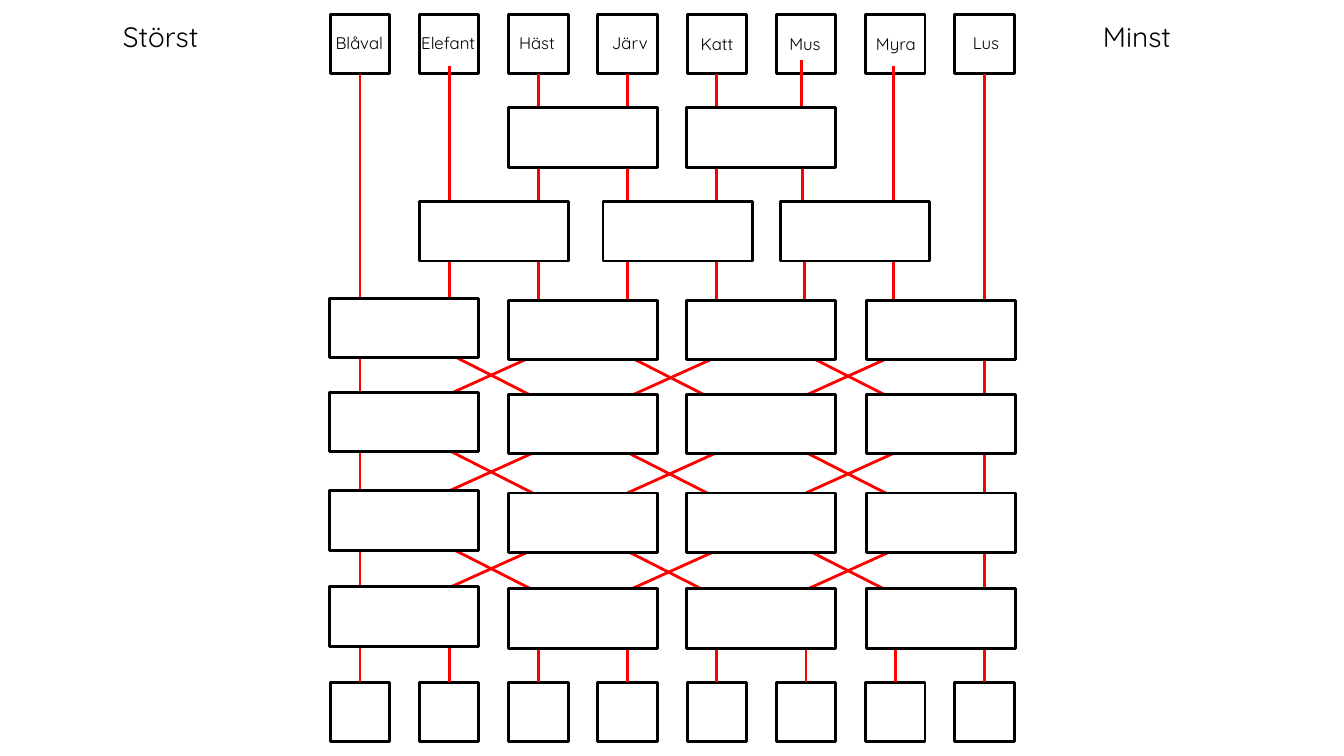
"""Build a slide with a sorting network that orders eight animals by size."""
from dataclasses import dataclass, field
from typing import Optional

from lxml import etree
from pptx import Presentation
from pptx.dml.color import RGBColor
from pptx.enum.shapes import MSO_CONNECTOR, MSO_SHAPE
from pptx.enum.text import MSO_AUTO_SIZE, PP_ALIGN
from pptx.oxml.ns import qn
from pptx.shapes.autoshape import Shape
from pptx.shapes.connector import Connector
from pptx.shapes.shapetree import SlideShapes
from pptx.util import Inches, Pt

RECTANGLE = MSO_SHAPE.RECTANGLE
STRAIGHT = MSO_CONNECTOR.STRAIGHT
LEFT_ALIGN = PP_ALIGN.LEFT
GROW = MSO_AUTO_SIZE.SHAPE_TO_FIT_TEXT
TOP_SIDE, BOTTOM_SIDE = 0, 2

COLORS = {"box": "FFFFFF", "outline": "000000", "wire": "FF0000", "text": "000000"}
LINE_WIDTH = Pt(2)
LANES = 8
FIRST_LANE = 3.57
LANE_STEP = 0.885
NODE = 0.59
COMPARATOR_WIDTH = 1.48
INPUT_TOP, OUTPUT_TOP = 0.14, 6.77
CROSS_DROP, CROSS_RISE = 0.45, 0.4
CROSS_LANES = (1, 3, 5)


@dataclass(frozen=True)
class Label:
    text: str
    left: float
    top: float
    width: float = 0.76
    height: float = 0.3
    size: int = 12
    wrap: bool = True


@dataclass(frozen=True)
class WireRun:
    lanes: tuple[int, ...]
    start: float
    end: float
    shifted: dict[int, float] = field(default_factory=dict)
    from_inputs: bool = False
    to_outputs: bool = False


@dataclass(frozen=True)
class CrossRow:
    falling_tops: tuple[float, ...]
    rising_tops: tuple[float, ...]


@dataclass(frozen=True)
class ComparatorRow:
    top: float
    lefts: tuple[float, ...]
    first_raise: float = 0.0


LABELS = (
    Label("Blåval", 3.23, 0.28),
    Label("Elefant", 4.08, 0.28),
    Label("Häst", 5.05, 0.28),
    Label("Järv", 5.97, 0.28),
    Label("Katt", 6.85, 0.29),
    Label("Mus", 7.73, 0.29),
    Label("Myra", 8.59, 0.29),
    Label("Lus", 9.55, 0.28),
    Label("Störst", 1.12, 0.14, 0.95, 0.44, 20, False),
    Label("Minst", 10.84, 0.14, 0.89, 0.44, 20, False),
)
INNER_LANES = (2, 3, 4, 5)
OUTER_LANES = (0, 7)
WIRE_RUNS = (
    WireRun((2, 3, 4), 0.65, 1.2, from_inputs=True),
    WireRun((5,), 0.6, 1.17, {5: 7.95}),
    WireRun((1, 6), 0.65, 2.23, {6: 8.86}),
    WireRun(OUTER_LANES, 0.6, 3.15, from_inputs=True),
    WireRun(INNER_LANES, 1.53, 2.09, {5: 7.96}),
    WireRun((1, *INNER_LANES, 6), 2.55, 3.11, {5: 7.98, 6: 8.86}),
    WireRun(OUTER_LANES, 3.46, 4.02),
    WireRun(OUTER_LANES, 4.39, 4.95),
    WireRun(OUTER_LANES, 5.36, 5.92),
    WireRun(tuple(range(LANES)), 6.32, 6.89, to_outputs=True),
)
CROSS_ROWS = (
    CrossRow((3.51, 3.53, 3.52), (3.51, 3.54, 3.52)),
    CrossRow((4.47, 4.49, 4.49), (4.47, 4.49, 4.49)),
    CrossRow((5.43, 5.47, 5.45), (5.43, 5.46, 5.45)),
)
FULL_ROW = (3.27, 5.04, 6.81, 8.59)
COMPARATOR_ROWS = (
    ComparatorRow(1.07, (5.04, 6.81)),
    ComparatorRow(2.0, (4.16, 5.98, 7.74)),
    *(ComparatorRow(top, FULL_ROW, 0.02) for top in (2.98, 3.91, 4.89, 5.84)),
)


def color(name: str) -> RGBColor:
    return RGBColor.from_string(COLORS[name])


def lane_x(lane: int) -> float:
    return FIRST_LANE + lane * LANE_STEP


def add_box(shapes: SlideShapes, left: float, top: float, width: float) -> Shape:
    box = shapes.add_shape(RECTANGLE, Inches(left), Inches(top), Inches(width), Inches(NODE))
    box.shadow.inherit = False
    box.fill.solid()
    box.fill.fore_color.rgb = color("box")
    box.line.color.rgb = color("outline")
    box.line.width = LINE_WIDTH
    return box


def add_node_row(shapes: SlideShapes, top: float) -> list[Shape]:
    return [add_box(shapes, lane_x(lane) - NODE / 2, top, NODE) for lane in range(LANES)]


def add_wire(shapes: SlideShapes, x1: float, y1: float, x2: float, y2: float,
             source: Optional[Shape] = None, target: Optional[Shape] = None) -> Connector:
    wire = shapes.add_connector(STRAIGHT, Inches(x1), Inches(y1), Inches(x2), Inches(y2))
    wire.line.color.rgb = color("wire")
    wire.line.width = LINE_WIDTH
    etree.SubElement(wire._element.spPr, qn("a:effectLst"))
    if source is not None:
        wire.begin_connect(source, BOTTOM_SIDE)
    if target is not None:
        wire.end_connect(target, TOP_SIDE)
    return wire


def add_wire_run(shapes: SlideShapes, run: WireRun, inputs: list[Shape],
                 outputs: list[Shape]) -> None:
    for lane in run.lanes:
        x = run.shifted.get(lane, lane_x(lane))
        source = inputs[lane] if run.from_inputs else None
        target = outputs[lane] if run.to_outputs else None
        add_wire(shapes, x, run.start, x, run.end, source, target)


def add_cross_row(shapes: SlideShapes, row: CrossRow) -> None:
    for lane, falling, rising in zip(CROSS_LANES, row.falling_tops, row.rising_tops):
        left, right = lane_x(lane), lane_x(lane + 1)
        add_wire(shapes, left, falling, right, falling + CROSS_DROP)
        add_wire(shapes, left, rising + CROSS_RISE, right, rising)


def add_comparator_row(shapes: SlideShapes, row: ComparatorRow) -> None:
    for index, left in enumerate(row.lefts):
        top = row.top if index else row.top - row.first_raise
        add_box(shapes, left, top, COMPARATOR_WIDTH)


def add_label(shapes: SlideShapes, label: Label) -> None:
    caption = shapes.add_textbox(Inches(label.left), Inches(label.top),
                                 Inches(label.width), Inches(label.height))
    frame = caption.text_frame
    frame.word_wrap = label.wrap
    frame.auto_size = GROW
    paragraph = frame.paragraphs[0]
    paragraph.alignment = LEFT_ALIGN
    run = paragraph.add_run()
    run.text = label.text
    for attribute, value in {"name": "Quicksand", "size": Pt(label.size)}.items():
        setattr(run.font, attribute, value)
    run.font.color.rgb = color("text")


def main() -> None:
    deck = Presentation()
    deck.slide_width, deck.slide_height = Inches(13.33), Inches(7.5)
    shapes = deck.slides.add_slide(deck.slide_layouts[6]).shapes
    inputs = add_node_row(shapes, INPUT_TOP)
    outputs = add_node_row(shapes, OUTPUT_TOP)
    for cross_row in CROSS_ROWS:
        add_cross_row(shapes, cross_row)
    for wire_run in WIRE_RUNS:
        add_wire_run(shapes, wire_run, inputs, outputs)
    for comparator_row in COMPARATOR_ROWS:
        add_comparator_row(shapes, comparator_row)
    for label in LABELS:
        add_label(shapes, label)
    deck.save("out.pptx")


if __name__ == "__main__":
    main()
